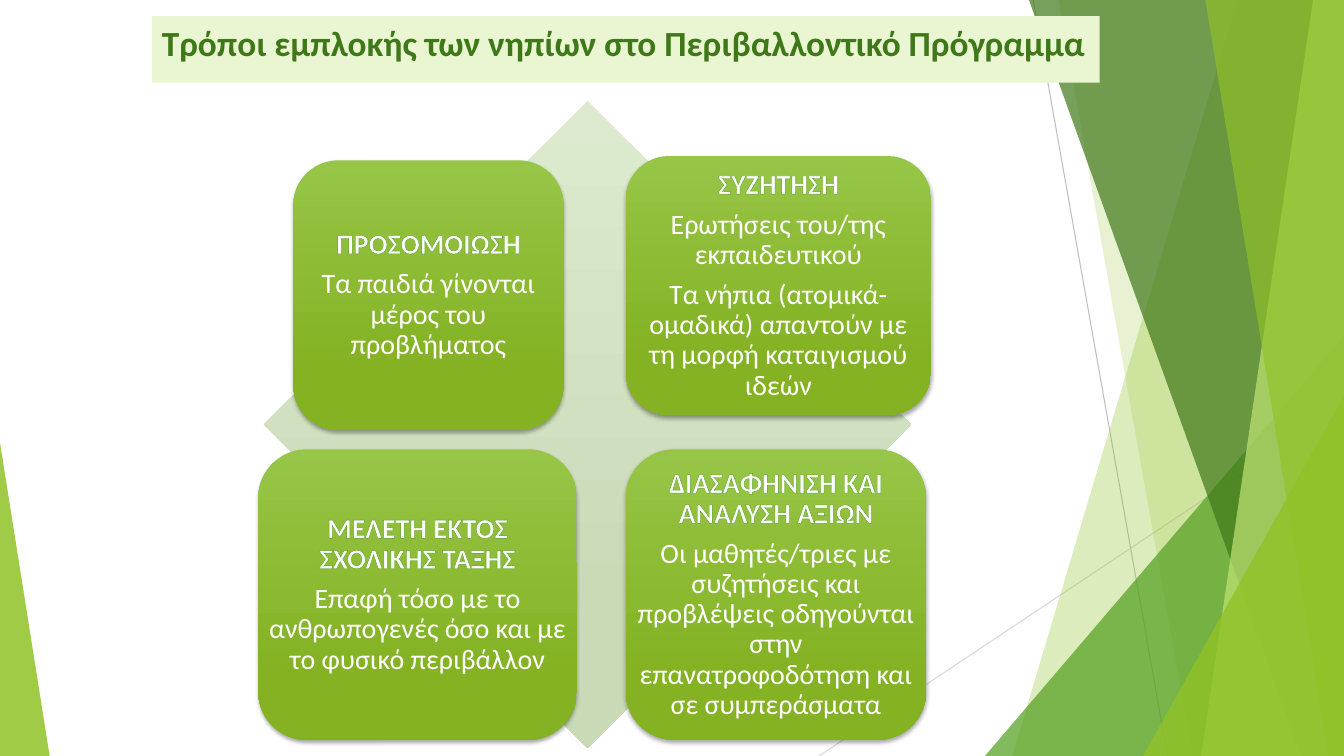
from dataclasses import dataclass
from typing import NamedTuple

from lxml.etree import SubElement
from pptx import Presentation
from pptx.dml.color import RGBColor
from pptx.enum.shapes import MSO_CONNECTOR as Connector, MSO_SHAPE as Preset
from pptx.enum.text import MSO_ANCHOR as Anchor, PP_ALIGN as Align
from pptx.oxml.ns import qn
from pptx.util import Pt


@dataclass(frozen=True)
class Theme:
    font: str = "Calibri"
    title_size: float = 25.2
    card_size: float = 20
    white: str = "FFFFFF"
    lime: str = "90C226"
    pale_lime: str = "C0E474"
    green: str = "54A021"
    dark_green: str = "3F7819"
    title_fill: str = "EAF6D1"
    shadow: str = "000000"
    diamond: tuple[str, str] = ("DDEACF", "C9DAB7")
    card: tuple[str, str] = ("97C547", "84B223")
    steep_line: str = "BFBFBF"
    flat_line: str = "D9D9D9"


class Box(NamedTuple):
    left: float
    top: float
    width: float
    height: float


class Ray(NamedTuple):
    start: tuple[float, float]
    end: tuple[float, float]
    color: str


class Ribbon(NamedTuple):
    """A band from a slanted left edge to the right side of the slide."""
    top_x: float
    bottom_x: float
    color: str
    opacity: int


class Wedge(NamedTuple):
    """A right triangle; apex 0 is left, 1 is right."""
    box: Box
    apex: float
    color: str
    opacity: int


class Card(NamedTuple):
    box: Box
    heading: str
    body: list[str]


THEME = Theme()
WIDTH, HEIGHT = 960, 540

RAYS = [
    Ray((738, 0), (834, HEIGHT), THEME.steep_line),
    Ray((WIDTH, 290), (585, HEIGHT), THEME.flat_line),
]
FACETS = [
    Ribbon(884, 723, THEME.lime, 30),
    Ribbon(756, 852, THEME.lime, 20),
    Wedge(Box(703.5, 240, 256.5, 300), 1, THEME.green, 72),
    Ribbon(735, 929.5, THEME.dark_green, 70),
    Ribbon(938, 858, THEME.pale_lime, 70),
    Ribbon(861, 949, THEME.lime, 65),
    Wedge(Box(816.5, 283, 143.5, 257), 1, THEME.lime, 80),
    Wedge(Box(0, 316, 35.5, 224), 0, THEME.lime, 85),
]
TITLE_BOX = Box(108.5, 11.5, 677, 47.5)
TITLE = "Τρόποι εμπλοκής των νηπίων στο Περιβαλλοντικό Πρόγραμμα"
DIAMOND_BOX = Box(188.5, 72, 462.5, 462.5)
CARDS = [
    Card(Box(209.5, 114.5, 193, 192.5), "ΠΡΟΣΟΜΟΙΩΣΗ",
         ["Τα παιδιά γίνονται μέρος του προβλήματος"]),
    Card(Box(447, 111.5, 218, 185), "ΣΥΖΗΤΗΣΗ",
         ["Ερωτήσεις του/της εκπαιδευτικού",
          "Τα νήπια (ατομικά-ομαδικά) απαντούν με τη μορφή καταιγισμού ιδεών"]),
    Card(Box(184.5, 321, 227.5, 207.5), "ΜΕΛΕΤΗ ΕΚΤΟΣ ΣΧΟΛΙΚΗΣ ΤΑΞΗΣ",
         ["Επαφή τόσο με το ανθρωπογενές όσο και με το φυσικό περιβάλλον"]),
    Card(Box(447, 321, 214.5, 207.5), "ΔΙΑΣΑΦΗΝΙΣΗ ΚΑΙ ΑΝΑΛΥΣΗ ΑΞΙΩΝ",
         ["Οι μαθητές/τριες με συζητήσεις και προβλέψεις οδηγούνται στην "
          "επανατροφοδότηση και σε συμπεράσματα"]),
]


def rgb(color: str) -> RGBColor:
    return RGBColor.from_string(color)


def points(values) -> list:
    return [Pt(value) for value in values]


def fill_solid(shape, color: str, opacity: int = 100) -> None:
    shape.shadow.inherit = False
    shape.line.fill.background()
    shape.fill.solid()
    shape.fill.fore_color.rgb = rgb(color)
    if opacity < 100:
        color_element = shape.fill._xPr.find(".//" + qn("a:srgbClr"))
        SubElement(color_element, qn("a:alpha"), val=str(opacity * 1000))


def fill_gradient(shape, colors: tuple[str, str]) -> None:
    shape.shadow.inherit = False
    shape.line.fill.background()
    shape.fill.gradient()
    shape.fill.gradient_angle = 270
    for stop, color, position in zip(shape.fill.gradient_stops, colors, (0, 0.78)):
        stop.color.rgb = rgb(color)
        stop.position = position


def add_soft_shadow(shape) -> None:
    effects = shape._element.spPr.find(qn("a:effectLst"))
    shadow = SubElement(effects, qn("a:outerShdw"), blurRad=str(Pt(3)),
                        dist=str(Pt(2)), dir="5400000", rotWithShape="0")
    color = SubElement(shadow, qn("a:srgbClr"), val=THEME.shadow)
    SubElement(color, qn("a:alpha"), val="35000")


def outline_text(run, color: str) -> None:
    properties = run._r.get_or_add_rPr()
    line = SubElement(properties, qn("a:ln"), w=str(Pt(0.52)))
    SubElement(SubElement(line, qn("a:solidFill")), qn("a:srgbClr"), val=color)
    properties.insert(0, line)


def style_font(paragraph, size: float, color: str, bold: bool) -> None:
    font = paragraph.font
    font.name, font.size, font.bold = THEME.font, Pt(size), bold
    font.color.rgb = rgb(color)


def draw_ray(slide, ray: Ray) -> None:
    connector = slide.shapes.add_connector(
        Connector.STRAIGHT, *points(ray.start + ray.end))
    connector.line.color.rgb = rgb(ray.color)
    connector.line.width = Pt(0.75)
    SubElement(connector._element.spPr, qn("a:effectLst"))


def draw_facet(slide, facet: Ribbon | Wedge) -> None:
    if isinstance(facet, Ribbon):
        builder = slide.shapes.build_freeform(Pt(facet.top_x), 0)
        corners = [(WIDTH, 0), (WIDTH, HEIGHT), (facet.bottom_x, HEIGHT)]
        builder.add_line_segments([points(corner) for corner in corners], close=True)
        shape = builder.convert_to_shape()
    else:
        shape = slide.shapes.add_shape(Preset.ISOSCELES_TRIANGLE, *points(facet.box))
        shape.adjustments[0] = facet.apex
    fill_solid(shape, facet.color, facet.opacity)


def draw_title(slide) -> None:
    shape = slide.shapes.add_textbox(*points(TITLE_BOX))
    fill_solid(shape, THEME.title_fill)
    shape.text_frame.word_wrap = True
    paragraph = shape.text_frame.paragraphs[0]
    paragraph.text = TITLE
    style_font(paragraph, THEME.title_size, THEME.dark_green, True)


def draw_card(slide, card: Card) -> None:
    panel = slide.shapes.add_shape(Preset.ROUNDED_RECTANGLE, *points(card.box))
    fill_gradient(panel, THEME.card)
    add_soft_shadow(panel)

    # A separate text box keeps the full card width for the words
    frame = slide.shapes.add_textbox(*points(card.box)).text_frame
    frame.word_wrap = True
    frame.vertical_anchor = Anchor.MIDDLE
    frame.margin_left = frame.margin_right = Pt(6)
    frame.margin_top = frame.margin_bottom = Pt(6)
    frame.text = "\n".join([card.heading, *card.body])
    for index, paragraph in enumerate(frame.paragraphs):
        paragraph.alignment = Align.CENTER
        paragraph.line_spacing = 0.9
        paragraph.space_after = Pt(7)
        style_font(paragraph, THEME.card_size, THEME.white, index == 0)
    outline_text(frame.paragraphs[0].runs[0], THEME.green)


def main() -> None:
    presentation = Presentation()
    presentation.slide_width, presentation.slide_height = Pt(WIDTH), Pt(HEIGHT)
    slide = presentation.slides.add_slide(presentation.slide_layouts[6])

    # Background facets
    for ray in RAYS:
        draw_ray(slide, ray)
    for facet in FACETS:
        draw_facet(slide, facet)

    # Title and diagram
    draw_title(slide)
    diamond = slide.shapes.add_shape(Preset.DIAMOND, *points(DIAMOND_BOX))
    fill_gradient(diamond, THEME.diamond)
    for card in CARDS:
        draw_card(slide, card)

    presentation.save("out.pptx")


if __name__ == "__main__":
    main()
